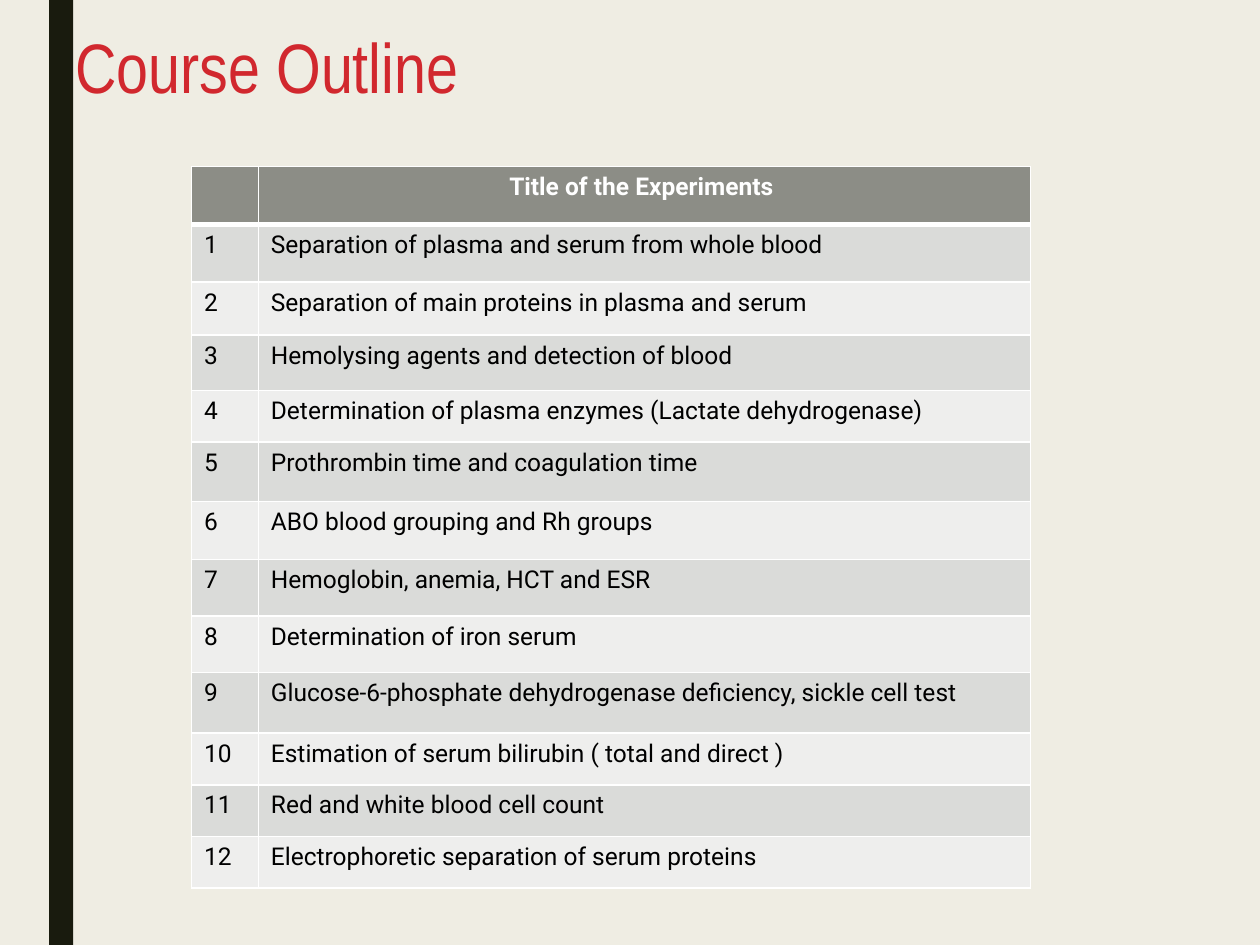
import pptx
import pptx.util
import pptx.dml.color
import pptx.enum.shapes
import pptx.enum.text
import lxml.etree
from pptx.oxml.ns import qn
from pptx.util import Inches

COLORS = {
    "background": "EFEDE3",
    "bar": "191B0E",
    "title": "D1282E",
    "header": "8C8D86",
    "odd": "DADBD9",
    "even": "EEEEED",
    "white": "FFFFFF",
    "black": "000000",
}
EXPERIMENTS = [
    "Separation of plasma and serum from whole blood",
    "Separation of main proteins in plasma and serum",
    "Hemolysing agents and detection of blood",
    "Determination of plasma enzymes (Lactate dehydrogenase)",
    "Prothrombin time and coagulation time",
    "ABO blood grouping and Rh groups",
    "Hemoglobin, anemia, HCT and ESR",
    "Determination of iron serum",
    "Glucose-6-phosphate dehydrogenase deficiency, sickle cell test",
    "Estimation of serum bilirubin ( total and direct )",
    "Red and white blood cell count",
    "Electrophoretic separation of serum proteins",
]
COLUMN_WIDTHS = [0.53, 6.13]
ROW_HEIGHTS = [0.46, 0.46, 0.42, 0.44, 0.41, 0.47, 0.46, 0.45, 0.45, 0.48, 0.41, 0.41, 0.41]


def color(name):
    return pptx.dml.color.RGBColor.from_string(COLORS[name])


def add_border(cell, side, points):
    line = lxml.etree.SubElement(cell._tc.get_or_add_tcPr(), qn("a:ln" + side),
                                 w=str(pptx.util.Pt(points)))
    fill = lxml.etree.SubElement(line, qn("a:solidFill"))
    lxml.etree.SubElement(fill, qn("a:srgbClr"), val=COLORS["white"])


deck = pptx.Presentation()
deck.slide_width = Inches(10)
deck.slide_height = Inches(7.5)
page = deck.slides.add_slide(deck.slide_layouts[5])

# Background and side bar
page.background.fill.solid()
page.background.fill.fore_color.rgb = color("background")
bar = page.shapes.add_shape(pptx.enum.shapes.MSO_SHAPE.RECTANGLE,
                            Inches(0.39), Inches(0), Inches(0.19), Inches(7.5))
bar.shadow.inherit = False
bar.fill.solid()
bar.fill.fore_color.rgb = color("bar")
bar.line.fill.background()

# Title
title = page.shapes.title
title.left, title.top = Inches(0.5), Inches(0.22)
title.width, title.height = Inches(6.33), Inches(0.87)
frame = title.text_frame
frame.text = "Course Outline"
frame.word_wrap = True
frame.auto_size = pptx.enum.text.MSO_AUTO_SIZE.NONE
frame.vertical_anchor = pptx.enum.text.MSO_ANCHOR.TOP
para = frame.paragraphs[0]
para.alignment = pptx.enum.text.PP_ALIGN.LEFT
para.line_spacing = 0.89
span = para.runs[0]
span.font.name = "Arial Narrow"
span.font.size = pptx.util.Pt(40)
span.font.color.rgb = color("title")

# Table of experiments
rows = [("", "Title of the Experiments ")]
rows += [(str(number), name) for number, name in enumerate(EXPERIMENTS, 1)]
table = page.shapes.add_table(len(rows), len(COLUMN_WIDTHS), Inches(1.52), Inches(1.32),
                              Inches(sum(COLUMN_WIDTHS)), Inches(sum(ROW_HEIGHTS))).table
for column, width in zip(table.columns, COLUMN_WIDTHS):
    column.width = Inches(width)

for row_index, texts in enumerate(rows):
    table.rows[row_index].height = Inches(ROW_HEIGHTS[row_index])
    is_header = row_index == 0
    shade = "header" if is_header else ("odd" if row_index % 2 else "even")
    for column_index, text in enumerate(texts):
        cell = table.cell(row_index, column_index)
        for side in "LRTB":
            at_header_edge = (is_header and side == "B") or (row_index == 1 and side == "T")
            add_border(cell, side, 3 if at_header_edge else 1)
        cell.fill.solid()
        cell.fill.fore_color.rgb = color(shade)
        cell.text_frame.text = text
        para = cell.text_frame.paragraphs[0]
        if is_header:
            para.alignment = pptx.enum.text.PP_ALIGN.CENTER
        for span in para.runs:
            span.font.name = "Roboto"
            span.font.size = pptx.util.Pt(14)
            span.font.bold = is_header
            span.font.color.rgb = color("white" if is_header else "black")

deck.save("out.pptx")
